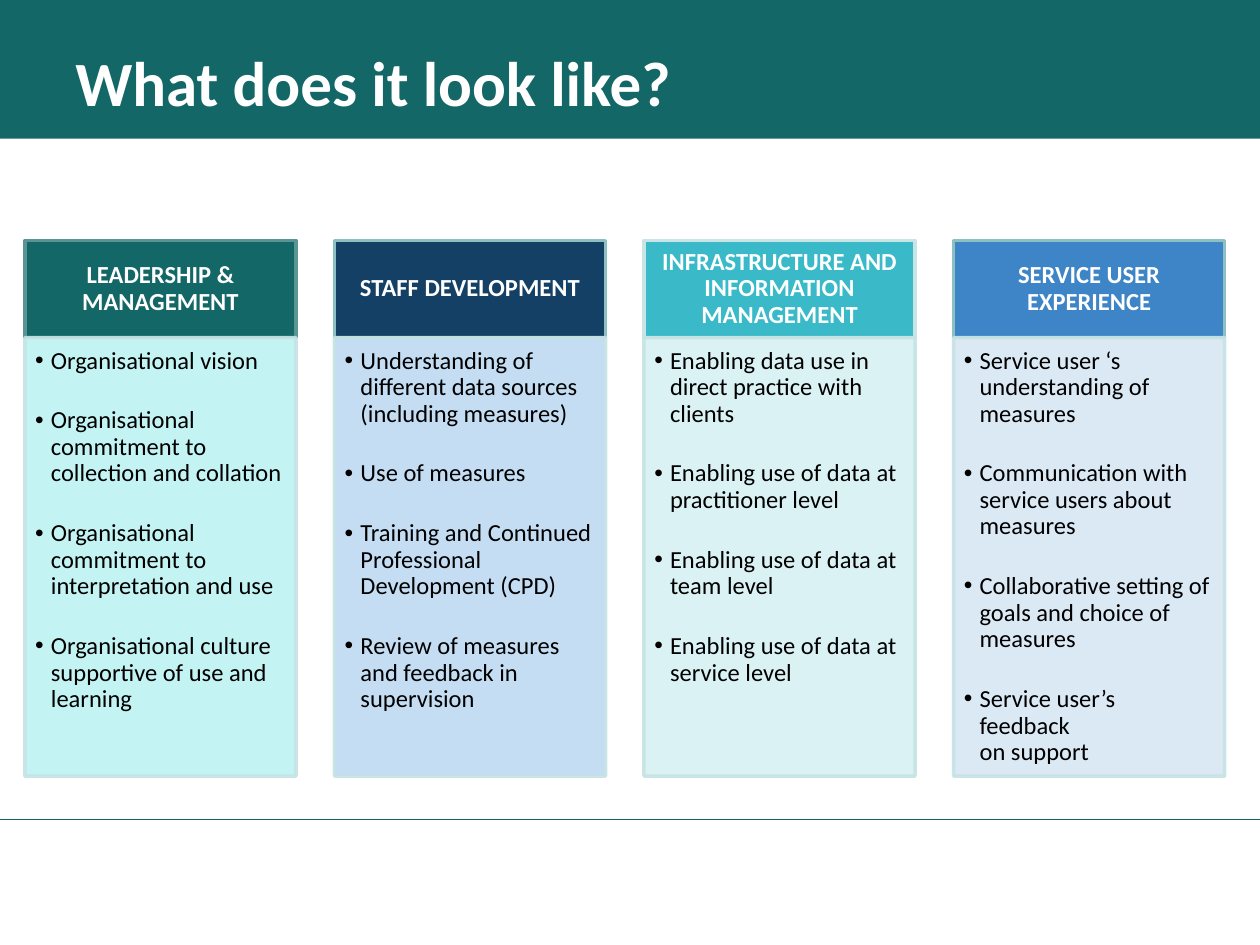
from dataclasses import dataclass

from lxml import etree
from pptx import Presentation
from pptx import util as u
from pptx.dml.color import RGBColor
from pptx.enum import shapes, text
from pptx.oxml.ns import qn


@dataclass(frozen=True)
class Theme:
    font: str = "Calibri"
    teal: str = "146767"
    white: str = "FFFFFF"
    black: str = "000000"
    edge: str = "C5E3E4"
    title: float = 36
    label: float = 14
    stroke: float = 2
    rule: float = 0.75
    alpha: int = 90


@dataclass(frozen=True)
class Box:
    left: float
    top: float
    width: float
    height: float

    def place(self) -> list:
        return [u.Pt(n) for n in (self.left, self.top, self.width, self.height)]


@dataclass(frozen=True)
class Column:
    head: str
    fill: str
    edge: str
    tint: str
    items: tuple[str, ...]


THEME = Theme()
WIDE, HIGH = 720, 540
LEFT, STEP, WIDTH = 14.2, 176.9, 155
TOP, HEAD, BODY = 137.5, 55.4, 250.6
INDENT, GAP = 9, 19.1

COLUMNS = (
    Column("LEADERSHIP & MANAGEMENT", THEME.teal, "5B9495", "BEF2F2", (
        "Organisational vision",
        "Organisational commitment to collection and collation",
        "Organisational commitment to\ninterpretation and use",
        "Organisational culture supportive of use and learning",
    )),
    Column("STAFF DEVELOPMENT", "144066", "8DC0C2", "BEDAF2", (
        "Understanding of different data sources (including measures)",
        "Use of measures",
        "Training and Continued\nProfessional Development (CPD)",
        "Review of measures and feedback in supervision",
    )),
    Column("INFRASTRUCTURE AND\nINFORMATION MANAGEMENT", "3ABAC8", "C8E4E5", "D8F1F4", (
        "Enabling data use in direct practice with clients",
        "Enabling use of data at practitioner level",
        "Enabling use of data at team level",
        "Enabling use of data at service level",
    )),
    Column("SERVICE USER EXPERIENCE", "3D85C6", "8DC0C2", "D8E7F4", (
        "Service user ‘s understanding of measures",
        "Communication with service users about measures",
        "Collaborative setting of goals and choice of measures",
        "Service user’s feedback\non support",
    )),
)


def paint(shape, fill: str, edge: str | None = None) -> None:
    shape.shadow.inherit = False
    shape.fill.solid()
    shape.fill.fore_color.rgb = RGBColor.from_string(fill)
    if edge is None:
        shape.line.fill.background()
    else:
        shape.line.color.rgb = RGBColor.from_string(edge)
        shape.line.width = u.Pt(THEME.stroke)


def fade(shape) -> None:
    for tone in shape.element.spPr.iter(qn("a:srgbClr")):
        etree.SubElement(tone, qn("a:alpha"), val=str(THEME.alpha * 1000))


def inset(frame, left: float, top: float, right: float, base: float) -> None:
    frame.word_wrap = True
    frame.margin_left, frame.margin_top = u.Pt(left), u.Pt(top)
    frame.margin_right, frame.margin_bottom = u.Pt(right), u.Pt(base)


def style(para, size: float, tone: str, bold: bool = False) -> None:
    for run in para.runs:
        run.font.name = THEME.font
        run.font.size = u.Pt(size)
        run.font.bold = bold
        run.font.color.rgb = RGBColor.from_string(tone)


def bullet(para) -> None:
    props = para._p.get_or_add_pPr()
    props.set("marL", str(u.Pt(INDENT)))
    props.set("indent", str(-u.Pt(INDENT)))
    etree.SubElement(props, qn("a:buFont"), typeface="Arial")
    etree.SubElement(props, qn("a:buChar"), char="•")


def block(slide, box: Box, fill: str, edge: str | None = None):
    shape = slide.shapes.add_shape(shapes.MSO_SHAPE.RECTANGLE, *box.place())
    paint(shape, fill, edge)
    return shape


def draw_title(slide, words: str) -> None:
    frame = slide.shapes.add_textbox(*Box(36, 21.6, 648, 49.7).place()).text_frame
    inset(frame, 7.2, 3.6, 7.2, 3.6)
    frame.vertical_anchor = text.MSO_ANCHOR.MIDDLE
    frame.text = words
    style(frame.paragraphs[0], THEME.title, THEME.white, True)


def draw_rule(slide, top: float) -> None:
    line = slide.shapes.add_connector(
        shapes.MSO_CONNECTOR.STRAIGHT, u.Pt(WIDE), u.Pt(top), u.Pt(0), u.Pt(top))
    line.line.color.rgb = RGBColor.from_string(THEME.teal)
    line.line.width = u.Pt(THEME.rule)
    etree.SubElement(line.element.spPr, qn("a:effectLst"))


def draw_head(slide, box: Box, col: Column) -> None:
    frame = block(slide, box, col.fill, col.edge).text_frame
    inset(frame, 7.8, 4.5, 7.8, 4.5)
    frame.vertical_anchor = text.MSO_ANCHOR.MIDDLE
    para = frame.paragraphs[0]
    para.text = col.head
    para.alignment = text.PP_ALIGN.CENTER
    para.line_spacing = 0.9
    style(para, THEME.label, THEME.white, True)


def draw_body(slide, box: Box, col: Column) -> None:
    shape = block(slide, box, col.tint, THEME.edge)
    fade(shape)
    frame = shape.text_frame
    inset(frame, 5.9, 5.9, 7.8, 8.8)
    frame.vertical_anchor = text.MSO_ANCHOR.TOP
    for i, item in enumerate(col.items):
        para = frame.add_paragraph() if i else frame.paragraphs[0]
        para.text = item
        bullet(para)
        para.alignment = text.PP_ALIGN.LEFT
        para.line_spacing = 0.9
        para.space_before = u.Pt(GAP if i else 0)
        style(para, THEME.label, THEME.black)


def main() -> None:
    deck = Presentation()
    deck.slide_width, deck.slide_height = u.Pt(WIDE), u.Pt(HIGH)
    slide = deck.slides.add_slide(deck.slide_layouts[6])
    block(slide, Box(0, 0, WIDE, 79.2), THEME.teal)
    draw_rule(slide, 468.5)
    draw_title(slide, "What does it look like?")
    for i, col in enumerate(COLUMNS):
        left = LEFT + i * STEP
        draw_head(slide, Box(left, TOP, WIDTH, HEAD), col)
        draw_body(slide, Box(left, TOP + HEAD, WIDTH, BODY), col)
    deck.save("out.pptx")


if __name__ == "__main__":
    main()
